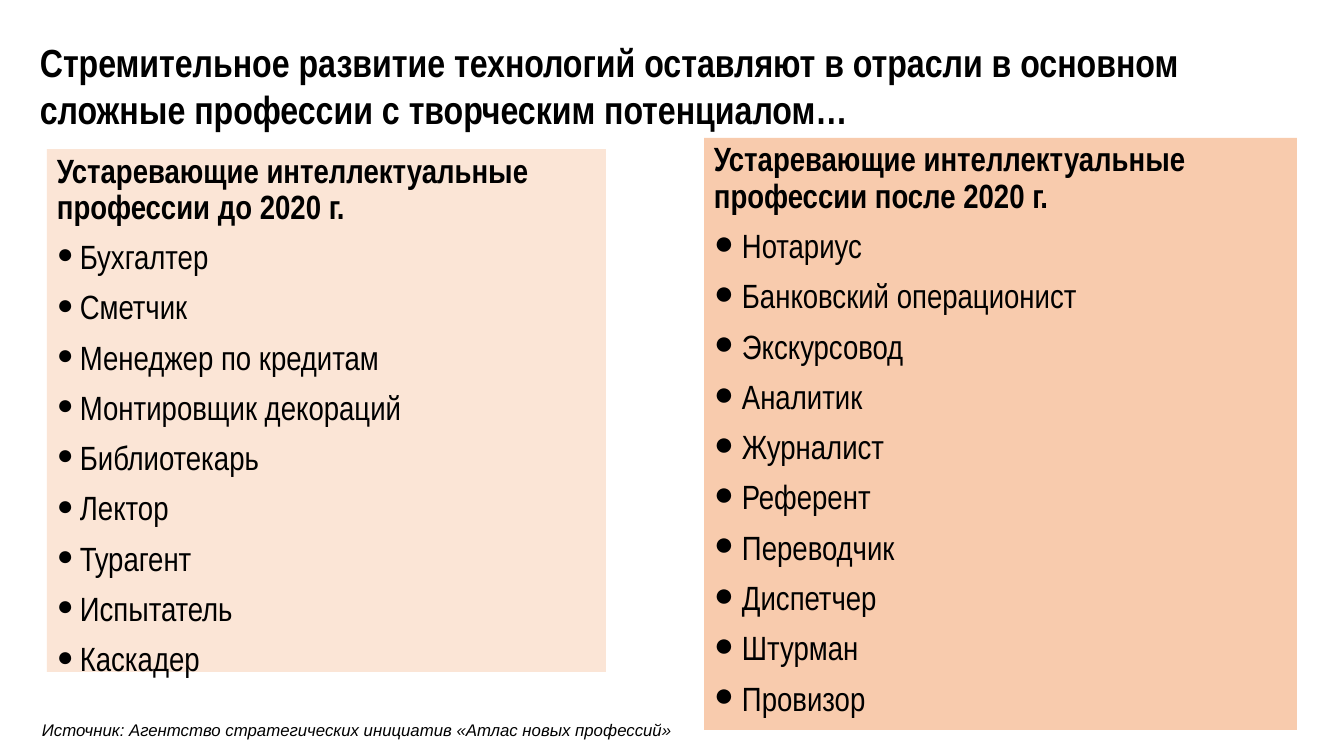
from lxml.etree import SubElement
from pptx import Presentation
from pptx.dml.color import RGBColor
from pptx.enum.shapes import MSO_SHAPE
from pptx.enum.text import MSO_ANCHOR, PP_ALIGN
from pptx.oxml.ns import qn
from pptx.util import Emu, Pt

EMU_PER_PX = 914400 / 100.8
SLIDE_SIZE = (1344, 756)

EARLY_PROFESSIONS = [
    "Бухгалтер", "Сметчик", "Менеджер по кредитам", "Монтировщик декораций",
    "Библиотекарь", "Лектор", "Турагент", "Испытатель", "Каскадер",
]
LATE_PROFESSIONS = [
    "Нотариус", "Банковский операционист", "Экскурсовод", "Аналитик",
    "Журналист", "Референт", "Переводчик", "Диспетчер", "Штурман", "Провизор",
]


def px(length):
    """Turn pixels into EMU."""
    return Emu(round(length * EMU_PER_PX))


def color(hex_string):
    """Turn a hex string into a colour."""
    return RGBColor.from_string(hex_string)


class SlideBuilder:
    """Hold the style and the slide that is being built."""

    heading_font = "Arial Narrow"
    source_font = "Arial"
    text_color = "000000"
    panel_size = 24

    def __init__(self, presentation):
        """Add a blank slide."""
        self.slide = presentation.slides.add_slide(presentation.slide_layouts[6])

    def add_run(self, paragraph, text, size, font, bold=False, italic=False):
        """Add one styled run to a paragraph."""
        run = paragraph.add_run()
        run.text = text
        run.font.name = font
        run.font.size = Pt(size)
        run.font.bold = bold
        run.font.italic = italic
        run.font.color.rgb = color(self.text_color)

    def add_bullet(self, paragraph, indent, percent):
        """Give a paragraph a round bullet with a hanging indent."""
        properties = paragraph._p.get_or_add_pPr()
        properties.set("marL", str(px(indent)))
        properties.set("indent", str(-px(indent)))
        SubElement(properties, qn("a:buSzPct"), val=str(percent * 1000))
        SubElement(properties, qn("a:buFont"), typeface=self.heading_font)
        SubElement(properties, qn("a:buChar"), char="●")

    def add_text(self, box, text, size, font, anchor=MSO_ANCHOR.TOP, **style):
        """Add a wrapped text box with one run."""
        frame = self.slide.shapes.add_textbox(*map(px, box)).text_frame
        frame.word_wrap = True
        frame.vertical_anchor = anchor
        self.add_run(frame.paragraphs[0], text, size, font, **style)

    def add_panel(self, box, fill, heading, professions, indent, bullet_percent):
        """Add a filled panel with a bold heading and a bulleted list."""
        shape = self.slide.shapes.add_shape(MSO_SHAPE.RECTANGLE, *map(px, box))
        shape.shadow.inherit = False
        shape.fill.solid()
        shape.fill.fore_color.rgb = color(fill)
        shape.line.fill.background()
        frame = shape.text_frame
        frame.word_wrap = True
        frame.vertical_anchor = MSO_ANCHOR.TOP
        self.add_run(frame.paragraphs[0], heading, self.panel_size, self.heading_font, bold=True)
        for profession in professions:
            paragraph = frame.add_paragraph()
            self.add_bullet(paragraph, indent, bullet_percent)
            paragraph.space_before = Pt(10)
            self.add_run(paragraph, profession, self.panel_size, self.heading_font)
        for paragraph in frame.paragraphs:
            paragraph.alignment = PP_ALIGN.LEFT
            paragraph.line_spacing = 0.9


def main():
    """Build the slide and save it."""
    presentation = Presentation()
    presentation.slide_width, presentation.slide_height = map(px, SLIDE_SIZE)
    builder = SlideBuilder(presentation)
    builder.add_text(
        (30, 40, 1270, 91),
        "Стремительное развитие технологий оставляют в отрасли в основном "
        "сложные профессии с творческим потенциалом…",
        28, builder.heading_font, MSO_ANCHOR.MIDDLE, bold=True,
    )
    builder.add_panel(
        (47, 149, 559, 523), "FBE5D6",
        "Устаревающие интеллектуальные профессии до 2020 г.",
        EARLY_PROFESSIONS, 23, 83,
    )
    builder.add_panel(
        (704, 138, 593, 592), "F8CBAD",
        "Устаревающие интеллектуальные профессии после 2020 г.",
        LATE_PROFESSIONS, 28, 100,
    )
    builder.add_text(
        (32, 715, 672, 30),
        "Источник: Агентство стратегических инициатив «Атлас новых профессий»",
        12, builder.source_font, italic=True,
    )
    presentation.save("out.pptx")


if __name__ == "__main__":
    main()
